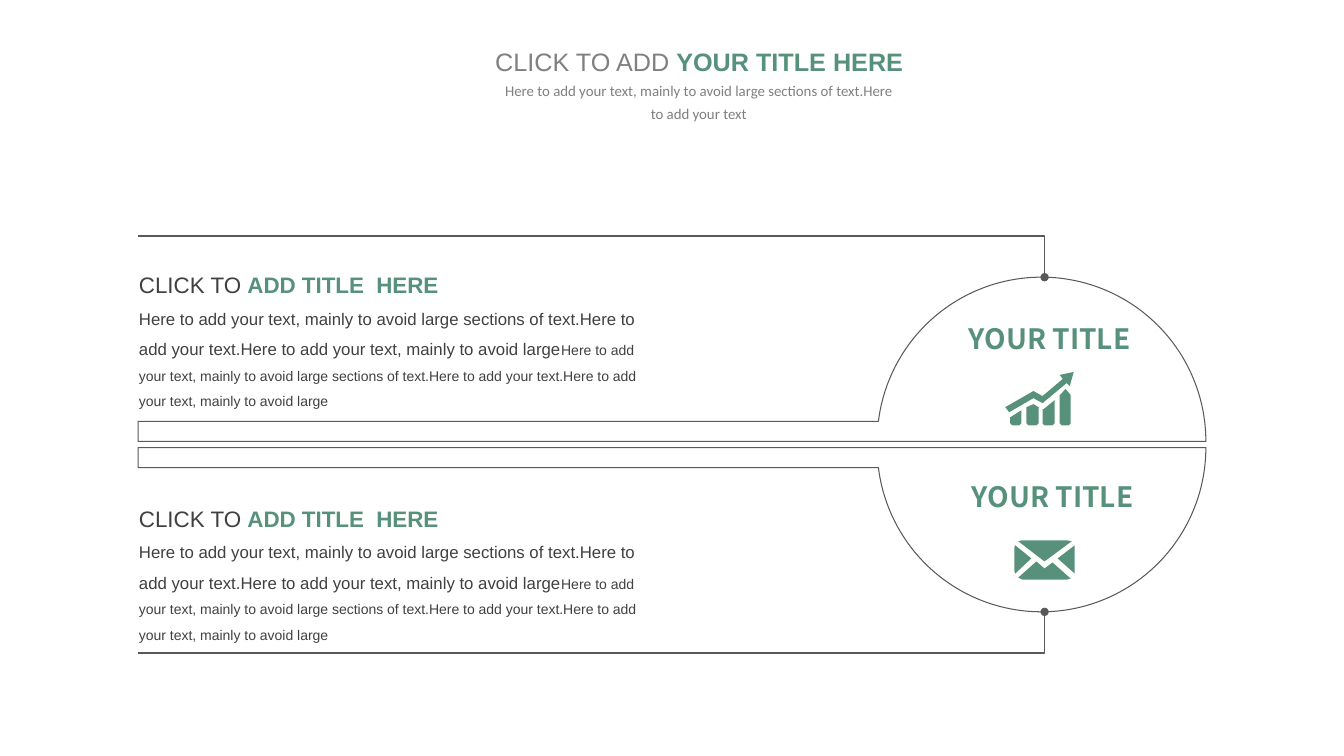
from math import asin, cos, pi, sin

from lxml import etree
from pptx import Presentation
from pptx.dml.color import RGBColor
from pptx.enum.text import MSO_AUTO_SIZE, PP_ALIGN
from pptx.oxml.ns import qn
from pptx.util import Inches, Pt

CENTER, LEFT = PP_ALIGN.CENTER, PP_ALIGN.LEFT
GROW = MSO_AUTO_SIZE.SHAPE_TO_FIT_TEXT
COLORS = {"green": "57917B", "line": "595959", "dark": "404040", "gray": "808080"}

# Geometry of the divided circle, in inches
MIRROR_Y = 4.41
CENTER_X, FLAT_Y, RADIUS = 10.33, 4.38, 1.63
ARM_LEFT, ARM_HEIGHT = 1.37, 0.2
ARC_STEPS = 96

BODY = "Here to add your text, mainly to avoid large sections of text.Here to add your text."
BODY_LONG = BODY + "Here to add your text, mainly to avoid large"

# Icon outlines, in inches
GROWTH_ARROW = [
    (9.97, 4.04), (10.25, 3.88), (10.34, 3.93), (10.54, 3.76), (10.51, 3.72),
    (10.65, 3.69), (10.61, 3.83), (10.58, 3.8), (10.34, 4), (10.25, 3.95), (10.01, 4.09),
]
BAR_BASE, BAR_CORNER = 4.22, 0.02
BAR_TOPS = [
    [(10.02, 4.14), (10.13, 4.07)],
    [(10.18, 4.04), (10.25, 4.01), (10.3, 4.04)],
    [(10.34, 4.06), (10.35, 4.06), (10.46, 3.97)],
    [(10.51, 3.92), (10.57, 3.86), (10.62, 3.92)],
]
ENVELOPE = [
    [(10.1, 5.37), (10.14, 5.36), (10.58, 5.36), (10.63, 5.37), (10.36, 5.57)],
    [(10.66, 5.41), (10.49, 5.54), (10.66, 5.69)],
    [(10.62, 5.74), (10.58, 5.75), (10.14, 5.75), (10.1, 5.73), (10.28, 5.57),
     (10.36, 5.64), (10.44, 5.58)],
    [(10.07, 5.69), (10.23, 5.54), (10.07, 5.41), (10.06, 5.43), (10.06, 5.66)],
]


def rgb(name):
    return RGBColor.from_string(COLORS[name])


def mirrored(points):
    return [(x, 2 * MIRROR_Y - y) for x, y in points]


def add_outline(slide, contours, closed=True, fill=None, line_width=None):
    """Draw one freeform from one or more lists of points."""
    builder = None
    for contour in contours:
        start, *rest = [(Inches(x), Inches(y)) for x, y in contour]
        if builder is None:
            builder = slide.shapes.build_freeform(*start)
        else:
            builder.move_to(*start)
        builder.add_line_segments(rest, close=closed)
    outline = builder.convert_to_shape()
    outline.shadow.inherit = False
    if fill:
        outline.fill.solid()
        outline.fill.fore_color.rgb = rgb(fill)
    else:
        outline.fill.background()
    if line_width:
        outline.line.color.rgb = rgb("line")
        outline.line.width = Pt(line_width)
    else:
        outline.line.fill.background()
    return outline


def half_circle_points():
    """Upper half circle with a thin arm running to the left."""
    end = pi - asin(ARM_HEIGHT / RADIUS)
    angles = [end * step / ARC_STEPS for step in range(ARC_STEPS + 1)]
    arc = [(CENTER_X + RADIUS * cos(a), FLAT_Y - RADIUS * sin(a)) for a in angles]
    return arc + [(ARM_LEFT, FLAT_Y - ARM_HEIGHT), (ARM_LEFT, FLAT_Y)]


def bar_points(top):
    left, right = top[0][0], top[-1][0]
    shoulder = BAR_BASE - BAR_CORNER
    return top + [(right, shoulder), (right - BAR_CORNER, BAR_BASE),
                  (left + BAR_CORNER, BAR_BASE), (left, shoulder)]


def add_leader(slide, points):
    leader = add_outline(slide, [points], closed=False, line_width=1)
    line = leader.element.spPr.find(qn("a:ln"))
    etree.SubElement(line, qn("a:tailEnd"), type="oval")


def add_text(slide, box, paragraphs, wrap=True, align=LEFT, margin=None):
    """Each paragraph is (line spacing, [(text, font, size, color, bold), ...])."""
    text_box = slide.shapes.add_textbox(*map(Inches, box))
    frame = text_box.text_frame
    frame_format = {"word_wrap": wrap, "auto_size": GROW}
    if margin is not None:
        for side in ("left", "top", "right", "bottom"):
            frame_format["margin_" + side] = Inches(margin)
    for key, value in frame_format.items():
        setattr(frame, key, value)
    for index, (spacing, runs) in enumerate(paragraphs):
        paragraph = frame.add_paragraph() if index else frame.paragraphs[0]
        paragraph.alignment = align
        paragraph.line_spacing = spacing
        for text, font, size, color, bold in runs:
            run = paragraph.add_run()
            run.text = text
            for key, value in {"name": font, "size": Pt(size), "bold": bold}.items():
                setattr(run.font, key, value)
            run.font.color.rgb = rgb(color)


def add_section(slide, top):
    add_text(slide, (1.28, top, 5.35, 1.79), [
        (1.2, [("CLICK TO ", "Arial", 16, "dark", False),
               ("ADD TITLE  HERE", "Arial", 16, "green", True)]),
        (1.5, [(BODY_LONG, "Arial", 12, "dark", False),
               (BODY_LONG, "Arial", 10, "dark", False)]),
    ])


def add_circle_title(slide, left, top):
    title = [("YOUR TITLE", "Noto Sans CJK SC", 20, "green", True)]
    add_text(slide, (left, top, 1.64, 0.69), [(1.0, title)], wrap=False, margin=0)


def main():
    presentation = Presentation()
    presentation.slide_width = Inches(13.33)
    presentation.slide_height = Inches(7.5)
    slide = presentation.slides.add_slide(presentation.slide_layouts[6])

    # Half circles and leader lines
    upper_half = half_circle_points()
    upper_leader = [(ARM_LEFT, 2.34), (10.36, 2.34), (10.36, 2.75)]
    for half in (upper_half, mirrored(upper_half)):
        add_outline(slide, [half], line_width=0.75)
    for leader in (upper_leader, mirrored(upper_leader)):
        add_leader(slide, leader)

    # Circle titles and sections
    add_circle_title(slide, 9.61, 3.19)
    add_circle_title(slide, 9.64, 4.76)
    for section_top in (2.59, 4.91):
        add_section(slide, section_top)

    # Icons
    growth_chart = [GROWTH_ARROW] + [bar_points(top) for top in BAR_TOPS]
    for icon in (growth_chart, ENVELOPE):
        add_outline(slide, icon, fill="green")

    # Heading
    add_text(slide, (4.81, 0.41, 4.25, 0.4), [
        (1.0, [("CLICK TO ADD ", "Arial", 18, "gray", False),
               ("YOUR TITLE HERE", "Arial", 18, "green", True)]),
    ], wrap=False, align=CENTER)
    add_text(slide, (4.88, 0.71, 4.1, 0.56), [
        (1.3, [(BODY.rstrip("."), "Calibri", 10.6, "gray", False)]),
    ], align=CENTER)

    presentation.save("out.pptx")


if __name__ == "__main__":
    main()
